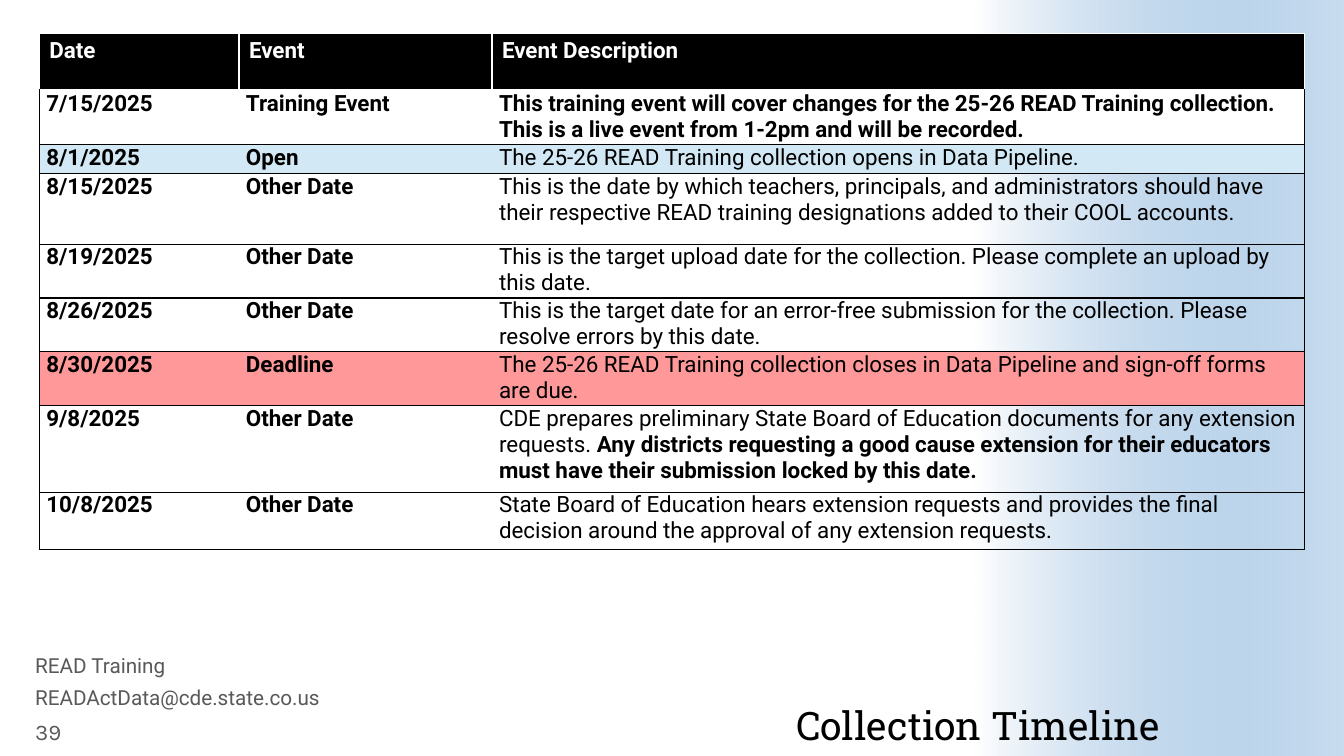
from dataclasses import dataclass
from typing import Optional

from lxml.etree import SubElement
from pptx import Presentation
from pptx.dml.color import RGBColor
from pptx.enum.shapes import MSO_SHAPE as Shape
from pptx.enum.text import MSO_ANCHOR as Anchor, PP_ALIGN as Align
from pptx.oxml import parse_xml
from pptx.oxml.ns import nsdecls, qn
from pptx.util import Inches, Pt

COLORS = {
    "black": "000000",
    "white": "FFFFFF",
    "gray": "595959",
    "side blue": "488BC9",
    "open": "D2E9F5",
    "deadline": "FF9999",
}
COLUMN_WIDTHS = (1.98, 2.51, 8.06)
HEADINGS = ("Date", "Event", "Event Description")
HEADER_HEIGHT = 0.57


@dataclass
class Event:
    date: str
    kind: str
    height: float
    description: str = ""
    bold_description: str = ""
    fill: Optional[str] = None


EVENTS = [
    Event("7/15/2025", "Training Event", 0.44, fill="white",
          bold_description="This training event will cover changes for the 25-26 READ Training "
          "collection. This is a live event from 1-2pm and will be recorded."),
    Event("8/1/2025", "Open", 0.29,
          "The 25-26 READ Training collection opens in Data Pipeline.", fill="open"),
    Event("8/15/2025", "Other Date", 0.7,
          "This is the date by which teachers, principals, and administrators should have "
          "their respective READ training designations added to their COOL accounts."),
    Event("8/19/2025", "Other Date", 0.44,
          "This is the target upload date for the collection. "
          "Please complete an upload by this date."),
    Event("8/26/2025", "Other Date", 0.44,
          "This is the target date for an error-free submission for the collection. "
          "Please resolve errors by this date."),
    Event("8/30/2025", "Deadline", 0.44,
          "The 25-26 READ Training collection closes in Data Pipeline and sign-off forms "
          "are due.", fill="deadline"),
    Event("9/8/2025", "Other Date", 0.86,
          "CDE prepares preliminary State Board of Education documents for any extension "
          "requests. ",
          "Any districts requesting a good cause extension for their educators must have "
          "their submission locked by this date."),
    Event("10/8/2025", "Other Date", 0.57,
          "State Board of Education hears extension requests and provides the final "
          "decision around the approval of any extension requests."),
]


def rgb(name: str) -> RGBColor:
    return RGBColor.from_string(COLORS[name])


def add_run(paragraph, text: str, *, size: float = 16, font: str = "Roboto",
            color: str = "black", bold: bool = False) -> None:
    run = paragraph.add_run()
    run.text = text
    run.font.size = Pt(size)
    run.font.name = font
    run.font.bold = bold
    run.font.color.rgb = rgb(color)


def add_text(slide, text: str, left: float, top: float, width: float, height: float, *,
             anchor=Anchor.TOP, align=Align.LEFT, spacing: float = 1.0,
             inset: Optional[float] = None, **run_format) -> None:
    frame = slide.shapes.add_textbox(
        Inches(left), Inches(top), Inches(width), Inches(height)).text_frame
    frame.word_wrap = True
    frame.vertical_anchor = anchor
    if inset is not None:
        frame.margin_left = frame.margin_right = Inches(inset)
        frame.margin_top = frame.margin_bottom = Inches(inset)
    paragraph = frame.paragraphs[0]
    paragraph.alignment = align
    paragraph.line_spacing = spacing
    add_run(paragraph, text, **run_format)


def add_side_fade(slide) -> None:
    """Fade from white to translucent blue along the right edge."""
    band = slide.shapes.add_shape(
        Shape.RECTANGLE, Inches(7.75), Inches(1.92), Inches(7.5), Inches(3.66))
    band.rotation = 270
    band.shadow.inherit = False
    band.line.fill.background()
    band.fill.gradient()
    band.fill.gradient_angle = 270
    for stop, name in zip(band.fill.gradient_stops, ("white", "side blue")):
        stop.color.rgb = rgb(name)
    last_color = list(band.fill._xPr.iter(qn("a:srgbClr")))[-1]
    SubElement(last_color, qn("a:alpha")).set("val", "30000")


def set_borders(cell, borders: dict[str, tuple[str, float]]) -> None:
    """Set the sides L, R, T and B; a side that is not given has no line."""
    properties = cell._tc.get_or_add_tcPr()
    for index, side in enumerate("LRTB"):
        color, width = borders.get(side, (None, 1))
        paint = (f'<a:solidFill><a:srgbClr val="{COLORS[color]}"/></a:solidFill>'
                 if color else "<a:noFill/>")
        properties.insert(index, parse_xml(
            f'<a:ln{side} {nsdecls("a")} w="{Pt(width)}">{paint}</a:ln{side}>'))


def set_fill(cell, name: Optional[str]) -> None:
    if name:
        cell.fill.solid()
        cell.fill.fore_color.rgb = rgb(name)
    else:
        cell.fill.background()


def add_timeline(slide) -> None:
    table = slide.shapes.add_table(
        len(EVENTS) + 1, len(HEADINGS),
        Inches(0.39), Inches(0.33), Inches(12.56), Inches(5.12)).table
    for column, width in zip(table.columns, COLUMN_WIDTHS):
        column.width = Inches(width)

    table.rows[0].height = Inches(HEADER_HEIGHT)
    for cell, heading in zip(table.rows[0].cells, HEADINGS):
        add_run(cell.text_frame.paragraphs[0], heading, color="white", bold=True)
        set_fill(cell, "black")
        set_borders(cell, {side: ("white", 3 if side == "B" else 1) for side in "LRTB"})

    for number, event in enumerate(EVENTS, start=1):
        row = table.rows[number]
        row.height = Inches(event.height)
        contents = (
            [(event.date, True)],
            [(event.kind, True)],
            [(event.description, False), (event.bold_description, True)],
        )
        for cell, runs, outer_side in zip(row.cells, contents, ("L", "", "R")):
            cell.margin_left = cell.margin_right = Inches(0.07)
            cell.margin_top = cell.margin_bottom = 0
            for text, bold in runs:
                if text:
                    add_run(cell.text_frame.paragraphs[0], text, bold=bold)
            set_fill(cell, event.fill)
            borders = {side: ("black", 1) for side in "TB" + outer_side}
            if number == 1:
                borders["T"] = ("white", 1)
            set_borders(cell, borders)


def main() -> None:
    presentation = Presentation()
    presentation.slide_width = Inches(13.33)
    presentation.slide_height = Inches(7.5)
    slide = presentation.slides.add_slide(presentation.slide_layouts[6])

    add_side_fade(slide)
    add_text(slide, "Collection Timeline", 4.26, 6.45, 7.24, 0.98, anchor=Anchor.BOTTOM,
             align=Align.RIGHT, spacing=0.9, inset=0, size=28, font="Roboto Slab")
    add_timeline(slide)
    for text, top in (("READ Training", 6.47), ("READActData@cde.state.co.us", 6.79)):
        add_text(slide, text, 0.25, top, 3.89, 0.31, spacing=0.8, size=14.8, color="gray")
    add_text(slide, "39", 0.25, 7.1, 0.85, 0.31, anchor=Anchor.MIDDLE,
             font="Karla", color="gray")

    presentation.save("out.pptx")


if __name__ == "__main__":
    main()
